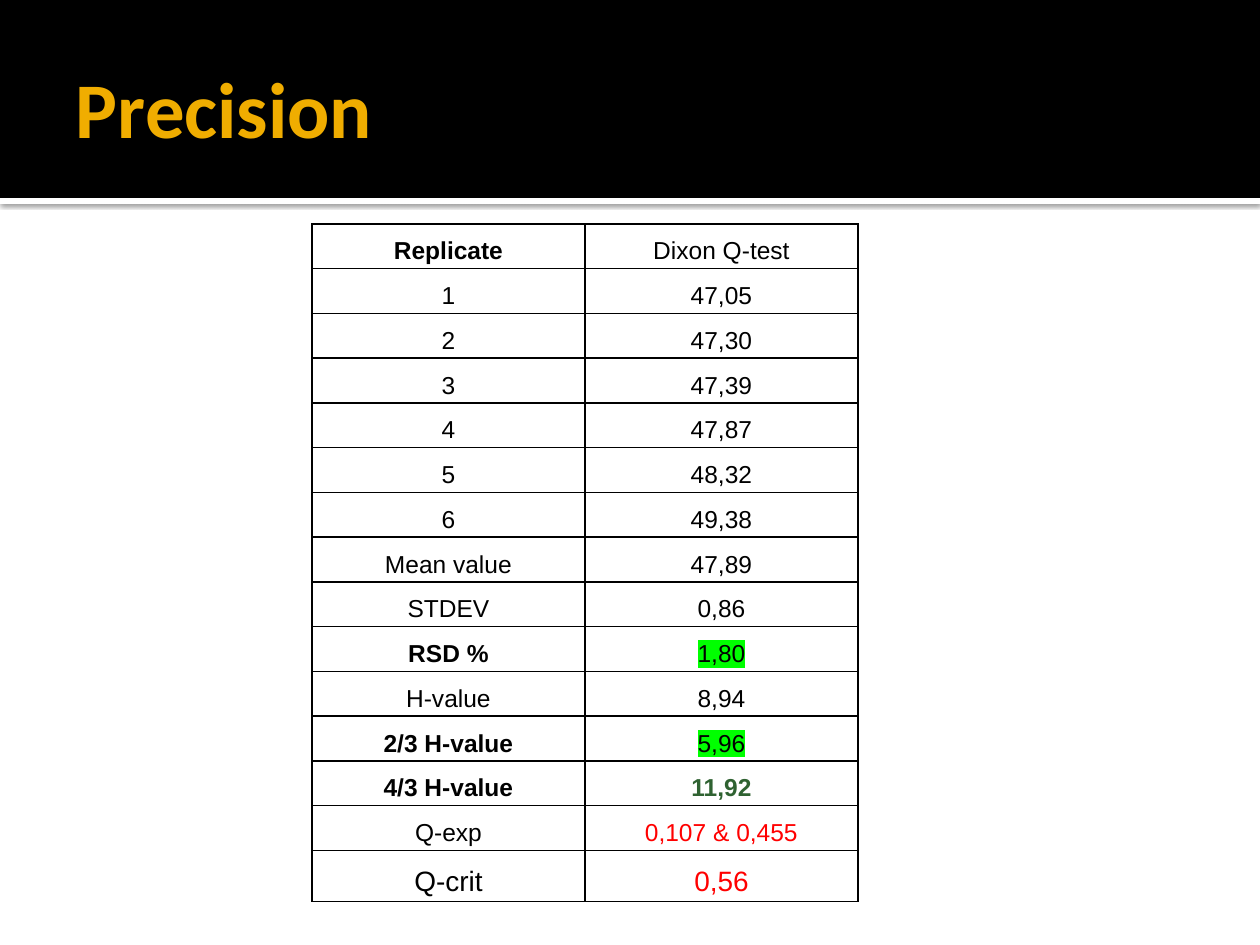
from lxml import etree
from pptx import Presentation
from pptx.dml.color import RGBColor
from pptx.enum import shapes, text
from pptx.oxml import parse_xml
from pptx.oxml.ns import qn
from pptx.util import Pt

PX = 914400 // 126
BLACK = RGBColor(0, 0, 0)
WHITE = RGBColor(255, 255, 255)
GOLD = RGBColor(0xF0, 0xAD, 0x00)
GREEN = RGBColor(0x2F, 0x62, 0x31)
LIME = RGBColor(0, 255, 0)
RED = RGBColor(255, 0, 0)

TITLE = "Precision"
ROWS = [
    ("Replicate", "Dixon Q-test"),
    ("1", "47,05"),
    ("2", "47,30"),
    ("3", "47,39"),
    ("4", "47,87"),
    ("5", "48,32"),
    ("6", "49,38"),
    ("Mean value", "47,89"),
    ("STDEV", "0,86"),
    ("RSD %", "1,80"),
    ("H-value", "8,94"),
    ("2/3 H-value", "5,96"),
    ("4/3 H-value", "11,92"),
    ("Q-exp", "0,107 & 0,455"),
    ("Q-crit", "0,56"),
]
BOLD = {"Replicate", "RSD %", "2/3 H-value", "4/3 H-value", "11,92"}
MARKED = {"1,80", "5,96"}
TINTS = {"11,92": GREEN, "0,107 & 0,455": RED, "0,56": RED}

NS = 'xmlns:a="http://schemas.openxmlformats.org/drawingml/2006/main"'
SHADOW = (f'<a:effectLst {NS}><a:outerShdw blurRad="31750" dist="10160" '
          'dir="5400000"><a:srgbClr val="000000"><a:alpha val="60000"/>'
          '</a:srgbClr></a:outerShdw></a:effectLst>')


def px(*sizes):
    return [round(size * PX) for size in sizes]


def add_bar(slide, top, high, color):
    bar = slide.shapes.add_shape(shapes.MSO_SHAPE.RECTANGLE,
                                 *px(0, top, 1260, high))
    bar.shadow.inherit = False
    bar.fill.solid()
    bar.fill.fore_color.rgb = color
    bar.line.fill.background()
    return bar


def add_head(slide):
    rule = add_bar(slide, 198, 6, WHITE)
    props = rule.fill._xPr
    props.replace(props.find(qn("a:effectLst")), parse_xml(SHADOW))
    band = add_bar(slide, 0, 198, BLACK)

    title = slide.shapes.title
    title.left, title.top, title.width, title.height = px(63, 21, 1134, 173)
    band._element.addnext(title._element)
    frame = title.text_frame
    frame.text = TITLE
    frame.vertical_anchor = text.MSO_ANCHOR.MIDDLE
    frame.margin_left, frame.margin_right = px(13, 6)
    para = frame.paragraphs[0]
    para.alignment = text.PP_ALIGN.LEFT
    font = para.font
    font.name, font.size, font.bold = "Calibri", Pt(45), True
    font.color.rgb = GOLD


def add_edges(cell):
    props = cell._tc.get_or_add_tcPr()
    for side in "LRTB":
        edge = etree.SubElement(props, qn(f"a:ln{side}"), w=str(Pt(1)))
        fill = etree.SubElement(edge, qn("a:solidFill"))
        etree.SubElement(fill, qn("a:srgbClr"), val=str(BLACK))


def mark(run):
    """Give the run a lime highlight, which must follow its fill."""
    run.font.color.rgb = BLACK
    props = run.font._element
    light = etree.Element(qn("a:highlight"))
    etree.SubElement(light, qn("a:srgbClr"), val=str(LIME))
    props.find(qn("a:solidFill")).addnext(light)


def fill_cell(cell, words, size):
    add_edges(cell)
    cell.fill.background()
    cell.margin_left, cell.margin_right = px(9, 9)
    cell.margin_top = cell.margin_bottom = 0
    cell.text = words
    para = cell.text_frame.paragraphs[0]
    para.alignment = text.PP_ALIGN.CENTER
    para.line_spacing = 1.5
    font = para.font
    font.name, font.size, font.bold = "Arial", Pt(size), words in BOLD
    font.color.rgb = TINTS.get(words, BLACK)
    if words in MARKED:
        mark(para.runs[0])


def add_grid(slide):
    body, last = 627, 51
    count = len(ROWS)
    grid = slide.shapes.add_table(
        count, 2, *px(312, 224, 546, body + last)).table
    grid.first_row = grid.horz_banding = False
    for r, row in enumerate(ROWS):
        final = r == count - 1
        grid.rows[r].height, = px(last if final else body / (count - 1))
        for c, words in enumerate(row):
            fill_cell(grid.cell(r, c), words, 16 if final else 14)


def main():
    deck = Presentation()
    deck.slide_width, deck.slide_height = px(1260, 945)
    slide = deck.slides.add_slide(deck.slide_layouts[5])
    add_head(slide)
    add_grid(slide)
    deck.save("out.pptx")


if __name__ == "__main__":
    main()
